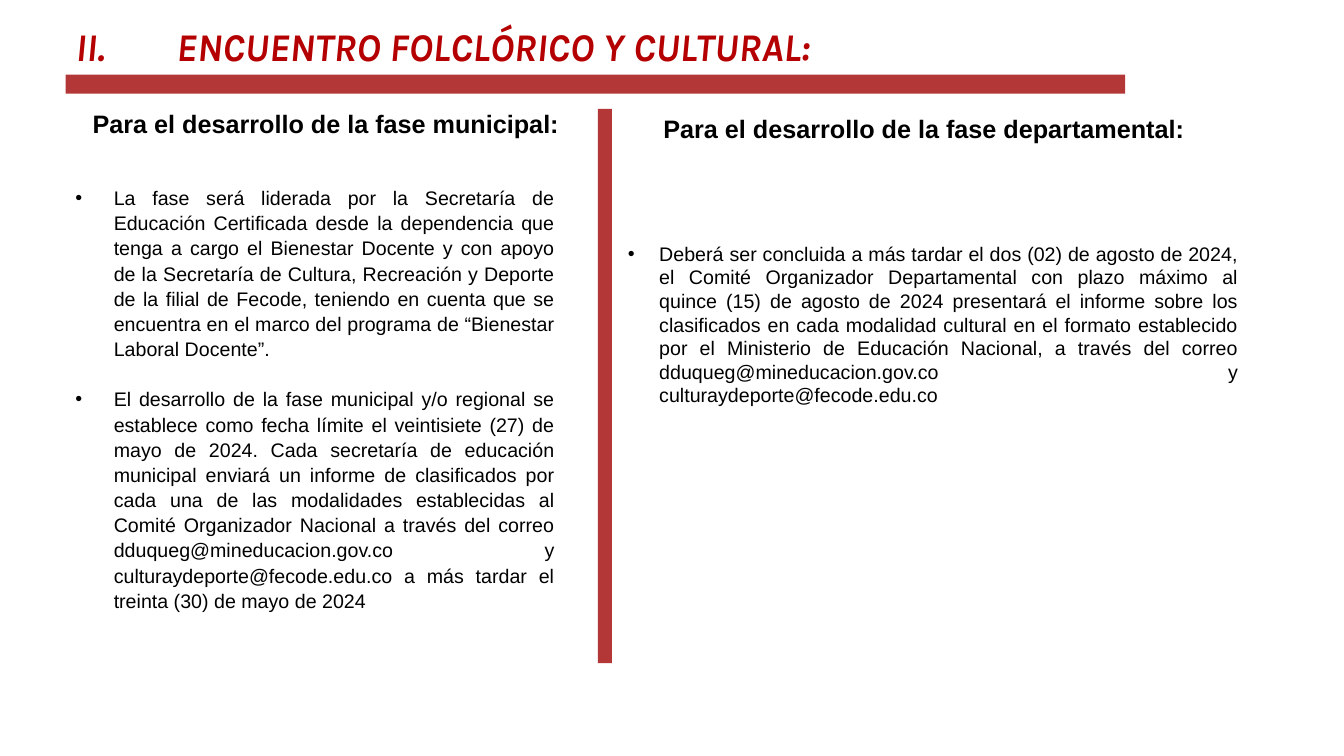
from lxml.etree import SubElement
from pptx import Presentation
from pptx.dml.color import RGBColor
from pptx.enum.shapes import MSO_SHAPE
from pptx.enum.text import MSO_ANCHOR, MSO_AUTO_SIZE, PP_ALIGN
from pptx.oxml.ns import qn
from pptx.util import Inches, Pt

TITLE_RED = RGBColor(0xB4, 0x00, 0x00)
BAR_RED = RGBColor(0xB4, 0x37, 0x37)
BLACK = RGBColor(0x00, 0x00, 0x00)

TITLE = "II.\tENCUENTRO FOLCLÓRICO Y CULTURAL:"
MUNICIPAL_HEADING = "Para el desarrollo de la fase municipal:"
MUNICIPAL_POINTS = [
    "La fase será liderada por la Secretaría de Educación Certificada desde la "
    "dependencia que tenga a cargo el Bienestar Docente y con apoyo de la Secretaría "
    "de Cultura, Recreación y Deporte de la filial de Fecode, teniendo en cuenta que "
    "se encuentra en el marco del programa de “Bienestar Laboral Docente”.",
    "El desarrollo de la fase municipal y/o regional se establece como fecha límite "
    "el veintisiete (27) de mayo de 2024. Cada secretaría de educación municipal "
    "enviará un informe de clasificados por cada una de las modalidades establecidas "
    "al Comité Organizador Nacional a través del correo dduqueg@mineducacion.gov.co y "
    "culturaydeporte@fecode.edu.co a más tardar el treinta (30) de mayo de 2024",
]
DEPARTMENTAL_HEADING = "Para el desarrollo de la fase departamental:"
DEPARTMENTAL_POINTS = [
    "Deberá ser concluida a más tardar el dos (02) de agosto de 2024, el Comité "
    "Organizador Departamental con plazo máximo al quince (15) de agosto de 2024 "
    "presentará el informe sobre los clasificados en cada modalidad cultural en el "
    "formato establecido por el Ministerio de Educación Nacional, a través del correo "
    "dduqueg@mineducacion.gov.co y culturaydeporte@fecode.edu.co",
]


def set_font(paragraph, name, size, color, bold=False, italic=False):
    font = paragraph.font
    font.name, font.size = name, Pt(size)
    font.bold, font.italic = bold, italic
    font.color.rgb = color


def add_bar(slide, left, top, width, height):
    bar = slide.shapes.add_shape(
        MSO_SHAPE.RECTANGLE, Inches(left), Inches(top), Inches(width), Inches(height))
    bar.shadow.inherit = False
    bar.fill.solid()
    bar.fill.fore_color.rgb = BAR_RED
    bar.line.fill.background()


def add_text_frame(slide, left, top, width, height):
    box = slide.shapes.add_textbox(
        Inches(left), Inches(top), Inches(width), Inches(height))
    box.text_frame.word_wrap = True
    return box.text_frame


def add_title(slide, left, top, width, height):
    title = slide.shapes.title
    title.left, title.top = Inches(left), Inches(top)
    title.width, title.height = Inches(width), Inches(height)
    frame = title.text_frame
    frame.auto_size = MSO_AUTO_SIZE.NONE
    frame.vertical_anchor = MSO_ANCHOR.TOP
    frame.text = TITLE
    paragraph = frame.paragraphs[0]
    paragraph.alignment = PP_ALIGN.LEFT
    # Tab stop between the numeral and the title
    tabs = SubElement(paragraph._p.get_or_add_pPr(), qn("a:tabLst"))
    SubElement(tabs, qn("a:tab"), pos=str(Inches(1)), algn="l")
    set_font(paragraph, "Karla", 28, TITLE_RED, bold=True, italic=True)
    # Rule under the title
    add_bar(slide, left, top + height, 10.51, 0.19)


def add_heading(slide, text, left, top, width, height):
    frame = add_text_frame(slide, left, top, width, height)
    frame.text = text
    set_font(frame.paragraphs[0], "Arial", 18, BLACK, bold=True)


def add_points(slide, points, left, top, width, height, indent, line_spacing):
    frame = add_text_frame(slide, left, top, width, height)
    for index, point in enumerate(points):
        paragraph = frame.paragraphs[0] if index == 0 else frame.add_paragraph()
        paragraph.text = point
        paragraph.alignment = PP_ALIGN.JUSTIFY
        paragraph.line_spacing = line_spacing
        if index:
            paragraph.space_before = Pt(18)
        properties = paragraph._p.get_or_add_pPr()
        properties.set("marL", str(Inches(indent)))
        properties.set("indent", str(-Inches(indent)))
        SubElement(properties, qn("a:buFont"), typeface="Arial")
        SubElement(properties, qn("a:buChar"), char="•")
        set_font(paragraph, "Arial", 14, BLACK)


def main():
    presentation = Presentation()
    presentation.slide_width = Inches(13.33)
    presentation.slide_height = Inches(7.5)
    slide = presentation.slides.add_slide(presentation.slide_layouts[5])

    add_title(slide, 0.65, 0.17, 11.56, 0.57)

    # Municipal phase
    add_heading(slide, MUNICIPAL_HEADING, 0.82, 1.03, 5.1, 0.4)
    add_points(slide, MUNICIPAL_POINTS, 0.65, 1.78, 4.95, 4.37, 0.38, 1.07)

    # Divider between the phases
    add_bar(slide, 5.93, 1.08, 0.14, 5.5)

    # Departmental phase
    add_heading(slide, DEPARTMENTAL_HEADING, 6.48, 1.08, 5.55, 0.4)
    add_points(slide, DEPARTMENTAL_POINTS, 6.13, 2.35, 6.25, 1.99, 0.31, 1.0)

    presentation.save("out.pptx")


if __name__ == "__main__":
    main()
